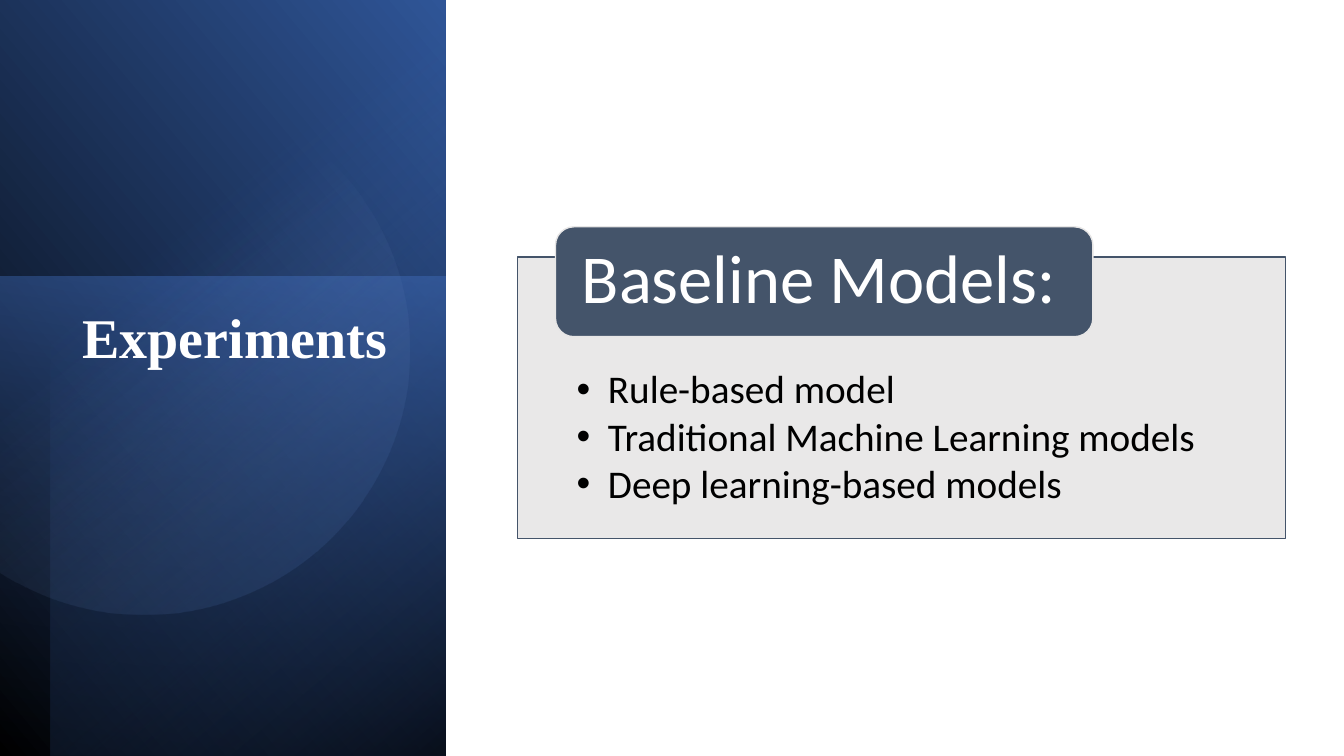
from math import acos, cos, degrees, radians, sin

from lxml import etree
from pptx import Presentation
from pptx.dml.color import RGBColor as RGB
from pptx.enum.shapes import MSO_SHAPE as Shape
from pptx.enum.text import MSO_ANCHOR as Anchor, PP_ALIGN as Align
from pptx.oxml.ns import qn
from pptx.util import Inches, Pt

BLACK = RGB(0x00, 0x00, 0x00)
WHITE = RGB(0xFF, 0xFF, 0xFF)
BLUE = RGB(0x44, 0x72, 0xC4)
DEEP = RGB(0x2F, 0x55, 0x97)
NAVY = RGB(0x20, 0x38, 0x64)
PALE = RGB(0x8F, 0xAA, 0xDC)
SLATE = RGB(0x44, 0x54, 0x6A)
GREY = RGB(0xE7, 0xE6, 0xE6)

MODELS = [
    "Rule-based model",
    "Traditional Machine Learning models",
    "Deep learning-based models",
]


def set_alpha(color, share):
    etree.SubElement(color, qn("a:alpha"), val=str(share * 1000))


def set_grad(shape, stops, angle):
    """Fill with a linear gradient; each stop is (place, colour, opacity)."""
    shape.shadow.inherit = False
    shape.line.fill.background()
    shape.fill.background()
    props = shape._element.spPr
    grad = etree.Element(qn("a:gradFill"), rotWithShape="1")
    items = etree.SubElement(grad, qn("a:gsLst"))
    for place, color, share in stops:
        stop = etree.SubElement(items, qn("a:gs"), pos=str(place * 1000))
        node = etree.SubElement(stop, qn("a:srgbClr"), val=str(color))
        if share < 100:
            set_alpha(node, share)
    etree.SubElement(grad, qn("a:lin"), ang=str(int(angle * 60000)), scaled="0")
    props.replace(props.find(qn("a:noFill")), grad)


def add_glow(slide, box, turn, stops, angle, flip=False):
    rect = slide.shapes.add_shape(Shape.RECTANGLE, *map(Inches, box))
    rect.rotation = turn
    if flip:
        rect._element.spPr.find(qn("a:xfrm")).set("flipH", "1")
    set_grad(rect, stops, angle)


def add_disc(slide, mid_x, mid_y, radius, stops, angle):
    """Draw a disc that is cut off at the left edge of the slide."""
    reach = degrees(acos(-mid_x / radius))
    steps = 120
    turns = [radians(reach * (2 * i / steps - 1)) for i in range(steps + 1)]
    points = [(Inches(mid_x + radius * cos(t)), Inches(mid_y + radius * sin(t)))
              for t in turns]
    path = slide.shapes.build_freeform(*points[0])
    path.add_line_segments(points[1:], close=True)
    set_grad(path.convert_to_shape(), stops, angle)


def add_panel(slide, kind, box, fill, line):
    panel = slide.shapes.add_shape(kind, *map(Inches, box))
    panel.shadow.inherit = False
    panel.fill.solid()
    panel.fill.fore_color.rgb = fill
    panel.line.color.rgb = line
    panel.line.width = Pt(1)
    return panel


def add_text(slide, box, lines, size, color, font="Calibri", bold=False,
             inset=(0.1, 0.05, 0.1, 0.05), anchor=Anchor.TOP, after=0):
    frame = slide.shapes.add_textbox(*map(Inches, box)).text_frame
    frame.word_wrap = True
    frame.vertical_anchor = anchor
    (frame.margin_left, frame.margin_top,
     frame.margin_right, frame.margin_bottom) = map(Inches, inset)
    for i, line in enumerate(lines):
        para = frame.add_paragraph() if i else frame.paragraphs[0]
        para.alignment = Align.LEFT
        para.line_spacing = 0.9
        para.space_after = Pt(after)
        run = para.add_run()
        run.text = line
        run.font.name = font
        run.font.size = Pt(size)
        run.font.bold = bold
        run.font.color.rgb = color
    return frame


def add_dots(frame, indent):
    for para in frame.paragraphs:
        props = para._p.get_or_add_pPr()
        props.set("marL", str(Inches(indent)))
        props.set("indent", str(-Inches(indent)))
        etree.SubElement(props, qn("a:buFont"), typeface="Arial")
        etree.SubElement(props, qn("a:buChar"), char="•")


def main():
    deck = Presentation()
    deck.slide_width, deck.slide_height = Inches(13.33), Inches(7.5)
    slide = deck.slides.add_slide(deck.slide_layouts[6])

    # Blue side band
    add_glow(slide, (-1.55, 1.55, 7.52, 4.42), 90,
             [(0, BLACK, 100), (100, DEEP, 100)], 310, flip=True)
    add_glow(slide, (-0.17, 2.91, 4.76, 4.42), 270,
             [(0, BLUE, 50), (100, NAVY, 0)], 190)
    add_glow(slide, (-1.29, 1.79, 7.5, 3.92), 270,
             [(0, BLACK, 59), (69, BLUE, 0)], 220, flip=True)
    add_disc(slide, 1.43, 3.47, 2.63,
             [(39, PALE, 0), (100, DEEP, 26)], 51.6)

    # Title
    add_text(slide, (0.72, 3.03, 3.42, 0.96), ["Experiments"], 40, WHITE,
             font="Times New Roman", bold=True)

    # List of models
    body = (5.13, 2.55, 7.62, 2.79)
    panel = add_panel(slide, Shape.RECTANGLE, body, GREY, SLATE)
    set_alpha(panel._element.spPr.find(qn("a:solidFill"))[0], 90)
    frame = add_text(slide, body, MODELS, 28, BLACK,
                     inset=(0.59, 1.12, 0.59, 0.22), after=3.5)
    add_dots(frame, 0.31)

    # Heading tab
    add_panel(slide, Shape.ROUNDED_RECTANGLE, (5.51, 2.25, 5.33, 1.09),
              SLATE, GREY)
    add_text(slide, (5.57, 2.3, 5.23, 0.98), ["Baseline Models:"], 49, WHITE,
             inset=(0.2, 0, 0.2, 0), anchor=Anchor.MIDDLE)

    deck.save("out.pptx")


if __name__ == "__main__":
    main()
